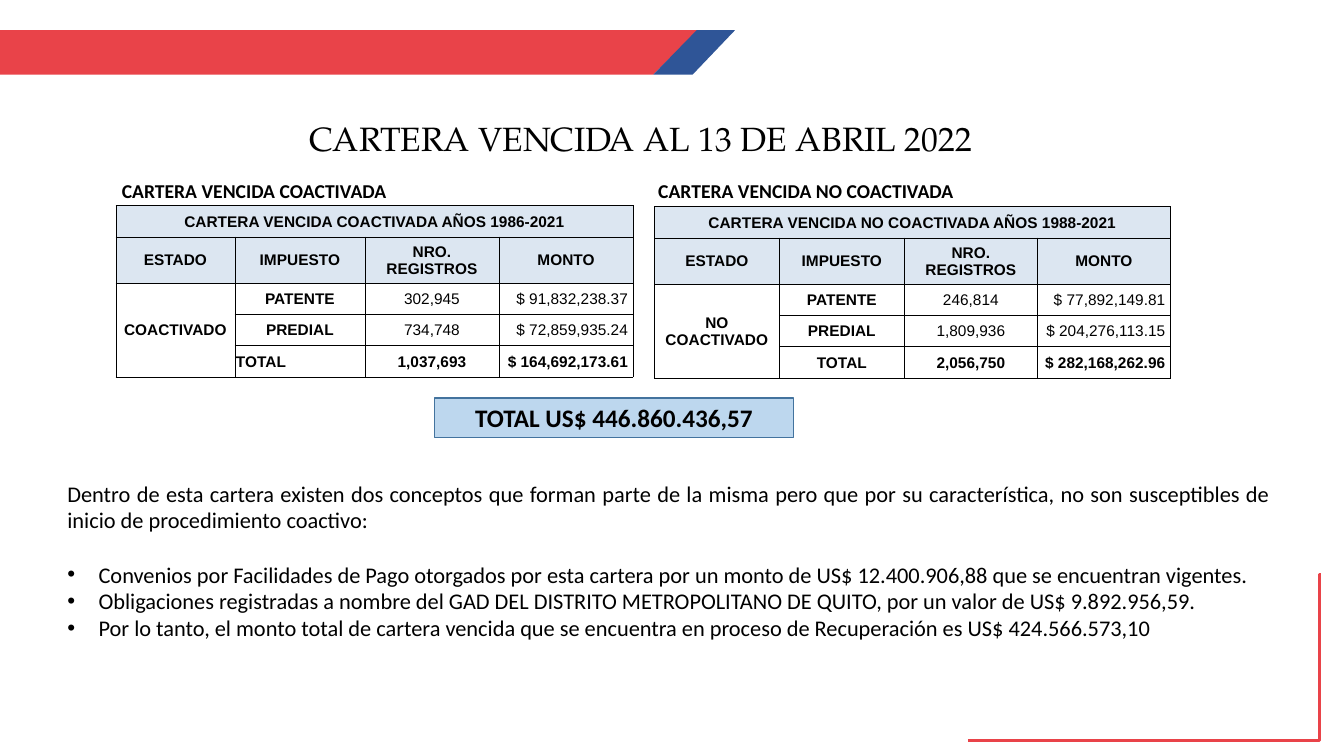
"""Build the slide on the overdue portfolio as of 13 April 2022."""
import lxml.etree
import pptx
import pptx.dml.color
import pptx.enum.shapes
import pptx.enum.text
import pptx.oxml.ns
import pptx.util

Inches = pptx.util.Inches
Pt = pptx.util.Pt
RGBColor = pptx.dml.color.RGBColor
ALIGN = pptx.enum.text.PP_ALIGN
ANCHOR = pptx.enum.text.MSO_ANCHOR
qn = pptx.oxml.ns.qn

RED = RGBColor(0xE9, 0x43, 0x49)
NAVY = RGBColor(0x2F, 0x55, 0x97)
BLACK = RGBColor(0, 0, 0)
HEADER_FILL = RGBColor(0xDC, 0xE6, 0xF1)
TOTAL_FILL = RGBColor(0xBD, 0xD7, 0xEE)
TOTAL_LINE = RGBColor(0x43, 0x73, 0x9E)

HEADINGS = ["ESTADO", "IMPUESTO", "NRO. REGISTROS", "MONTO"]
ROW_HEIGHTS = [0.31, 0.46, 0.31, 0.31, 0.31]
COACTIVADA = [
    ["COACTIVADO", "PATENTE", "302,945", "$ 91,832,238.37"],
    ["", "PREDIAL", "734,748", "$ 72,859,935.24"],
    ["", "TOTAL", "1,037,693", "$ 164,692,173.61"],
]
NO_COACTIVADA = [
    ["NO COACTIVADO", "PATENTE", "246,814", "$ 77,892,149.81"],
    ["", "PREDIAL", "1,809,936", "$ 204,276,113.15"],
    ["", "TOTAL", "2,056,750", "$ 282,168,262.96"],
]
INTRO = ("Dentro de esta cartera existen dos conceptos que forman parte de la misma pero que "
         "por su característica, no son susceptibles de inicio de procedimiento coactivo:")
BULLETS = [
    "Convenios por Facilidades de Pago otorgados por esta cartera por un monto de "
    "US$ 12.400.906,88 que se encuentran vigentes.",
    "Obligaciones registradas a nombre del GAD DEL DISTRITO METROPOLITANO DE QUITO, "
    "por un valor de US$ 9.892.956,59.",
    "Por lo tanto, el monto total de cartera vencida que se encuentra en proceso de "
    "Recuperación es US$ 424.566.573,10",
]


def set_font(p, size, name="Calibri", bold=False):
    """Set the font of a whole paragraph."""
    p.font.size = Pt(size)
    p.font.name = name
    p.font.bold = bold
    p.font.color.rgb = BLACK


def add_band(slide, points, color):
    """Draw a filled polygon through points given in inches."""
    (x, y), *rest = [(Inches(a), Inches(b)) for a, b in points]
    builder = slide.shapes.build_freeform(x, y)
    builder.add_line_segments(rest, close=True)
    sp = builder.convert_to_shape()
    sp.shadow.inherit = False
    sp.fill.solid()
    sp.fill.fore_color.rgb = color
    sp.line.fill.background()


def add_corner(slide):
    """Draw the red elbow in the bottom right corner."""
    c = slide.shapes.add_connector(
        pptx.enum.shapes.MSO_CONNECTOR.ELBOW,
        Inches(9.6), Inches(7.35), Inches(13.1), Inches(5.7))
    c.line.color.rgb = RED
    c.line.width = Pt(2.25)
    props = c._element.spPr
    guides = props.find(qn("a:prstGeom")).find(qn("a:avLst"))
    lxml.etree.SubElement(guides, qn("a:gd"), name="adj1", fmla="val 99600")
    lxml.etree.SubElement(props, qn("a:effectLst"))


def add_title(slide, text):
    """Place and format the title placeholder."""
    sp = slide.shapes.title
    sp.left, sp.top, sp.width, sp.height = map(Inches, (0.57, 1.16, 11.37, 2.58))
    tf = sp.text_frame
    tf.auto_size = pptx.enum.text.MSO_AUTO_SIZE.NONE
    tf.vertical_anchor = ANCHOR.TOP
    tf.text = text
    p = tf.paragraphs[0]
    p._p.get_or_add_pPr().set("marL", str(Inches(0.2)))
    p.alignment = ALIGN.CENTER
    p.line_spacing = 0.9
    set_font(p, 24, "TeX Gyre Pagella")


def add_label(slide, left, text):
    """Add the bold caption above a table."""
    sp = slide.shapes.add_textbox(Inches(left), Inches(1.73), Inches(4.2), Inches(0.34))
    sp.text_frame.word_wrap = True
    p = sp.text_frame.paragraphs[0]
    p.text = text
    set_font(p, 14, bold=True)


def add_borders(cell):
    """Give a cell thin black borders."""
    props = cell._tc.get_or_add_tcPr()
    for side in ("lnL", "lnR", "lnT", "lnB"):
        ln = lxml.etree.SubElement(props, qn(f"a:{side}"), w=str(Pt(0.5)))
        fill = lxml.etree.SubElement(ln, qn("a:solidFill"))
        lxml.etree.SubElement(fill, qn("a:srgbClr"), val=str(BLACK))


def format_cell(cell, text, row, col):
    """Fill in a table cell and format it by its row and column."""
    add_borders(cell)
    if row < 2:
        cell.fill.solid()
        cell.fill.fore_color.rgb = HEADER_FILL
    else:
        cell.fill.background()
    is_amount = row >= 2 and col == 3
    cell.margin_left = cell.margin_top = Inches(0.01)
    cell.margin_right = Inches(0.05 if is_amount else 0.01)
    cell.margin_bottom = 0
    cell.vertical_anchor = ANCHOR.MIDDLE
    p = cell.text_frame.paragraphs[0]
    p.text = text
    p.alignment = ALIGN.RIGHT if is_amount else ALIGN.CENTER
    set_font(p, 11, "Arial", bold=row not in (2, 3) or col < 2)


def add_portfolio_table(slide, left, top, widths, heading, body):
    """Add a table of registers and amounts by tax."""
    rows = [[heading, "", "", ""], HEADINGS, *body]
    table = slide.shapes.add_table(
        len(rows), len(widths), Inches(left), Inches(top),
        Inches(sum(widths)), Inches(sum(ROW_HEIGHTS))).table
    for column, width in zip(table.columns, widths):
        column.width = Inches(width)
    for row, height in zip(table.rows, ROW_HEIGHTS):
        row.height = Inches(height)
    for i, texts in enumerate(rows):
        for j, text in enumerate(texts):
            format_cell(table.cell(i, j), text, i, j)
    table.cell(0, 0).merge(table.cell(0, 3))
    table.cell(2, 0).merge(table.cell(4, 0))
    return table


def add_total(slide, text):
    """Add the box with the grand total."""
    sp = slide.shapes.add_shape(
        pptx.enum.shapes.MSO_SHAPE.RECTANGLE,
        Inches(4.31), Inches(3.95), Inches(3.56), Inches(0.39))
    sp.shadow.inherit = False
    sp.fill.solid()
    sp.fill.fore_color.rgb = TOTAL_FILL
    sp.line.color.rgb = TOTAL_LINE
    sp.line.width = Pt(1)
    sp.text_frame.vertical_anchor = ANCHOR.MIDDLE
    p = sp.text_frame.paragraphs[0]
    p.text = text
    p.alignment = ALIGN.CENTER
    set_font(p, 18, bold=True)


def add_notice(slide):
    """Add the introduction and its bulleted list."""
    sp = slide.shapes.add_textbox(Inches(0.57), Inches(4.71), Inches(12.13), Inches(1.99))
    tf = sp.text_frame
    tf.word_wrap = True
    tf.text = INTRO
    for text in BULLETS:
        p = tf.add_paragraph()
        p.text = text
        props = p._p.get_or_add_pPr()
        props.set("marL", str(Inches(0.31)))
        props.set("indent", str(Inches(-0.31)))
        lxml.etree.SubElement(props, qn("a:buFont"), typeface="Arial")
        lxml.etree.SubElement(props, qn("a:buChar"), char="•")
    for p in tf.paragraphs:
        p.alignment = ALIGN.JUSTIFY
        set_font(p, 16)
    tf.paragraphs[1].space_before = Pt(19.5)


def main():
    """Build and save the presentation."""
    prs = pptx.Presentation()
    prs.slide_width, prs.slide_height = Inches(13.33), Inches(7.5)
    s = prs.slides.add_slide(prs.slide_layouts[5])
    add_band(s, [(0, 0.3), (6.92, 0.3), (6.48, 0.74), (0, 0.74)], RED)
    add_band(s, [(6.91, 0.3), (7.29, 0.3), (6.87, 0.74), (6.48, 0.74)], NAVY)
    add_corner(s)
    add_title(s, "CARTERA VENCIDA AL 13 DE ABRIL 2022")
    add_label(s, 1.11, "CARTERA VENCIDA COACTIVADA")
    add_label(s, 6.43, "CARTERA VENCIDA NO COACTIVADA")
    table = add_portfolio_table(s, 1.15, 2.04, [1.18, 1.29, 1.33, 1.33],
                                "CARTERA VENCIDA COACTIVADA AÑOS 1986-2021", COACTIVADA)
    table.cell(4, 1).text_frame.paragraphs[0].alignment = ALIGN.LEFT
    add_portfolio_table(s, 6.49, 2.05, [1.24, 1.24, 1.32, 1.32],
                        "CARTERA VENCIDA NO COACTIVADA AÑOS 1988-2021", NO_COACTIVADA)
    add_notice(s)
    add_total(s, "TOTAL US$ 446.860.436,57")
    prs.save("out.pptx")


if __name__ == "__main__":
    main()
